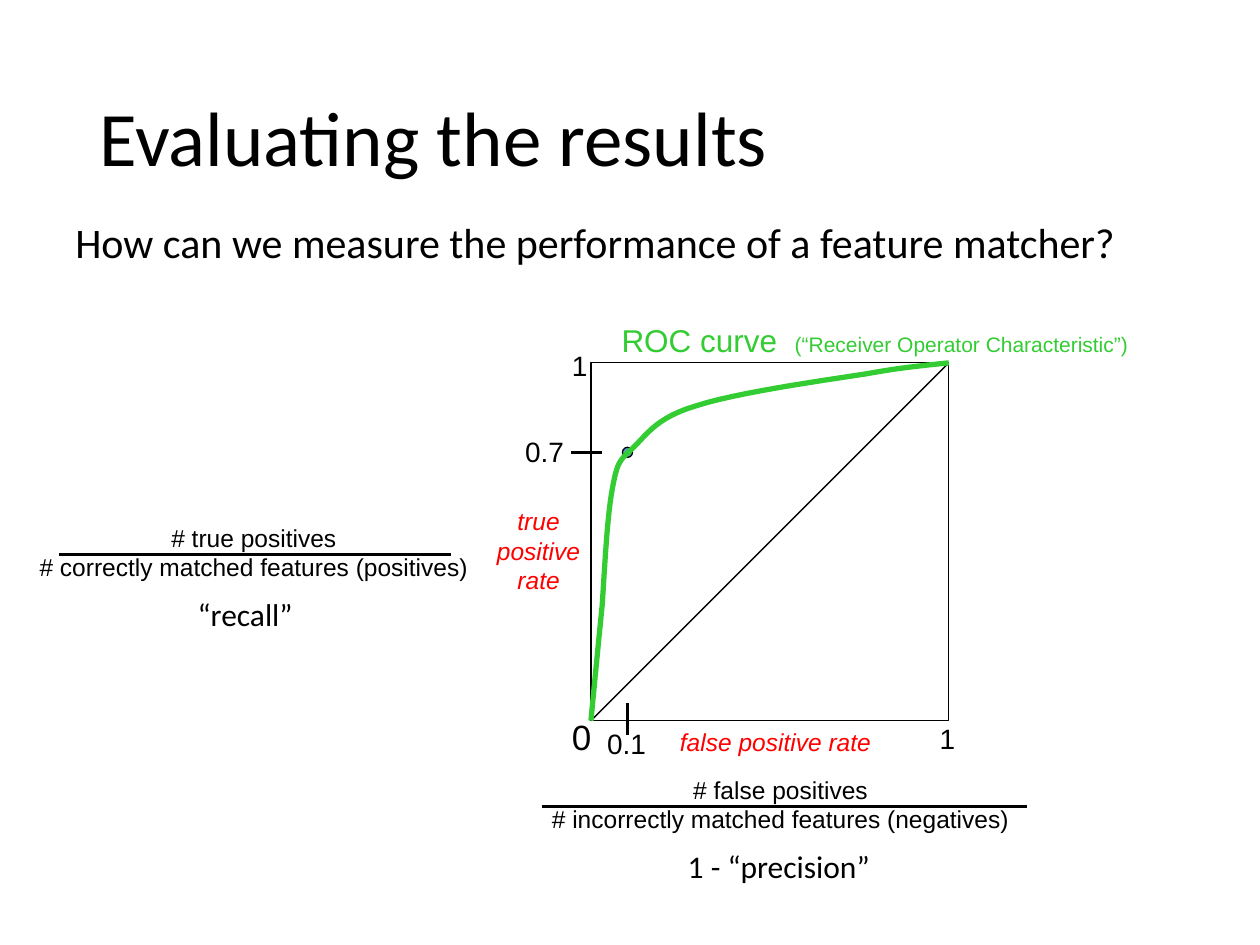
from lxml.etree import SubElement
from pptx import Presentation
from pptx.dml.color import RGBColor
from pptx.enum.shapes import MSO_CONNECTOR, MSO_SHAPE
from pptx.enum.text import MSO_ANCHOR, PP_ALIGN
from pptx.oxml.ns import qn
from pptx.util import Inches, Pt

BLACK = RGBColor(0x00, 0x00, 0x00)
RED = RGBColor(0xFF, 0x00, 0x00)
GREEN = RGBColor(0x33, 0xCC, 0x33)
BLUE = RGBColor(0x5B, 0x9B, 0xD5)

TITLE = dict(name="Calibri", size=Pt(44))
QUESTION = dict(name="Calibri", size=Pt(24))
MEASURE = dict(name="Calibri", size=Pt(18))
ORIGIN = dict(name="Arial", size=Pt(20))
TICK = dict(name="Arial", size=Pt(16))
FRACTION = dict(name="Arial", size=Pt(14))
AXIS = dict(name="Arial", size=Pt(14), italic=True, color=RED)
CURVE = dict(name="Arial", size=Pt(18), color=GREEN)
CURVE_NOTE = dict(CURVE, size=Pt(12))

# text, (left, top, width, height), format
LABELS = [
    ("How can we measure the performance of a feature matcher?", (0.5, 1.67, 9, 0.75), QUESTION),
    ("0.7", (4.07, 3.4, 0.83, 0.37), TICK),
    ("0", (4.44, 5.63, 0.5, 0.43), ORIGIN),
    ("1", (7.36, 5.68, 0.33, 0.37), TICK),
    ("1", (4.44, 2.72, 0.33, 0.37), TICK),
    ("0.1", (4.72, 5.72, 0.83, 0.37), TICK),
]
AXIS_LABELS = [
    ("false positive rate", (4.28, 5.72, 3.75, 0.33)),
    ("true\vpositive\vrate", (3.61, 3.97, 1.33, 1.04)),
]
# numerator, denominator, box, bar ends, measure, measure box
FRACTIONS = [
    ("# true positives", "# correctly matched features (positives)",
     (0.17, 4.1, 3.69, 0.57), (0.47, 3.58), "“recall”", (1.47, 4.67, 0.96, 0.4)),
    ("# false positives", "# incorrectly matched features (negatives)",
     (3.94, 6.1, 4.51, 0.81), (4.3, 8.15), "1 - “precision”", (5.36, 6.67, 1.66, 0.4)),
]
LEFT, TOP, SIDE = 4.69, 2.88, 2.84
RIGHT, BOTTOM = LEFT + SIDE, TOP + SIDE
POINT_X, POINT_Y, DOT, TICK_LENGTH = 4.98, 3.59, 0.08, 0.25
# each segment: two control points and an end point
ROC_START = (LEFT, BOTTOM)
ROC_SEGMENTS = [
    ((4.72, 5.41), (4.75, 5.1), (4.78, 4.8)),
    ((4.8, 4.49), (4.82, 4.09), (4.86, 3.88)),
    ((4.9, 3.67), (4.91, 3.66), (5.03, 3.55)),
    ((5.14, 3.44), (5.22, 3.31), (5.53, 3.22)),
    ((5.83, 3.12), (6.53, 3.02), (6.86, 2.97)),
    ((7.19, 2.91), (7.36, 2.9), (RIGHT, TOP)),
]
STEPS = 12


def inches(values):
    return [Inches(v) for v in values]


def add_run(p, text, style):
    r = p.add_run()
    r.text = text
    r.font.color.rgb = style.get("color", BLACK)
    for key, value in style.items():
        if key != "color":
            setattr(r.font, key, value)
    return r


def add_text(shapes, lines, box, style, align=PP_ALIGN.LEFT, wrap=True):
    """Add a text box with one paragraph for each of the lines."""
    tf = shapes.add_textbox(*inches(box)).text_frame
    tf.word_wrap = wrap
    for i, line in enumerate(lines):
        p = tf.add_paragraph() if i else tf.paragraphs[0]
        p.alignment = align
        for j, part in enumerate(line.split("\v")):
            if j:
                p.add_line_break()
            add_run(p, part, style)
    return tf


def add_line(shapes, x1, y1, x2, y2, width=1.5):
    s = shapes.add_connector(MSO_CONNECTOR.STRAIGHT, *inches((x1, y1, x2, y2)))
    s.line.color.rgb = BLACK
    s.line.width = Pt(width)
    SubElement(s._element.spPr, qn("a:effectLst"))


def style_shape(s, line, width, fill=None):
    s.shadow.inherit = False
    s.line.color.rgb = line
    s.line.width = Pt(width)
    if fill is None:
        s.fill.background()
    else:
        s.fill.solid()
        s.fill.fore_color.rgb = fill


def bezier(points, t):
    """Return the point at t on the cubic curve through four points."""
    weights = ((1 - t) ** 3, 3 * t * (1 - t) ** 2, 3 * t * t * (1 - t), t ** 3)
    return tuple(sum(w * pt[axis] for w, pt in zip(weights, points)) for axis in (0, 1))


def add_roc_curve(shapes):
    points, start = [], ROC_START
    for segment in ROC_SEGMENTS:
        points += [bezier((start, *segment), i / STEPS) for i in range(1, STEPS + 1)]
        start = segment[-1]
    builder = shapes.build_freeform(*inches(ROC_START))
    builder.add_line_segments([inches(pt) for pt in points], close=False)
    style_shape(builder.convert_to_shape(), GREEN, 3)


def add_plot(shapes):
    s = shapes.add_shape(MSO_SHAPE.RECTANGLE, *inches((LEFT, TOP, SIDE, SIDE)))
    style_shape(s, BLACK, 0.75)
    s = shapes.add_shape(MSO_SHAPE.OVAL,
                         *inches((POINT_X - DOT / 2, POINT_Y - DOT / 2, DOT, DOT)))
    style_shape(s, BLACK, 0.75, BLUE)
    add_line(shapes, POINT_X, 5.58, POINT_X, 5.58 + TICK_LENGTH)
    add_line(shapes, 4.53, POINT_Y, 4.53 + TICK_LENGTH, POINT_Y)
    add_line(shapes, LEFT, BOTTOM, RIGHT, TOP, 0.75)
    add_roc_curve(shapes)


def main():
    prs = Presentation()
    prs.slide_width, prs.slide_height = Inches(10), Inches(7.5)
    shapes = prs.slides.add_slide(prs.slide_layouts[6]).shapes

    tf = add_text(shapes, ["Evaluating the results"], (0.69, 0.4, 8.62, 1.45), TITLE)
    tf.vertical_anchor = MSO_ANCHOR.MIDDLE
    tf.paragraphs[0].line_spacing = 0.9

    add_plot(shapes)
    for text, box, style in LABELS:
        add_text(shapes, [text], box, style)
    for text, box in AXIS_LABELS:
        add_text(shapes, [text], box, AXIS, PP_ALIGN.CENTER)

    tf = add_text(shapes, ["ROC curve"], (3.78, 2.5, 6.33, 0.5), CURVE, PP_ALIGN.CENTER)
    p = tf.paragraphs[0]
    gap = add_run(p, " ", CURVE)
    gap._r.get_or_add_rPr().set("spc", "500")  # widens the gap by 5 pt
    add_run(p, "(“Receiver Operator Characteristic”)", CURVE_NOTE)

    for top, bottom, box, (x1, x2), measure, measure_box in FRACTIONS:
        group = shapes.add_group_shape().shapes
        add_text(group, [top, bottom], box, FRACTION, PP_ALIGN.CENTER)
        bar_y = box[1] + 0.3
        add_line(group, x1, bar_y, x2, bar_y)
        add_text(shapes, [measure], measure_box, MEASURE, wrap=False)

    prs.save("out.pptx")


if __name__ == "__main__":
    main()
